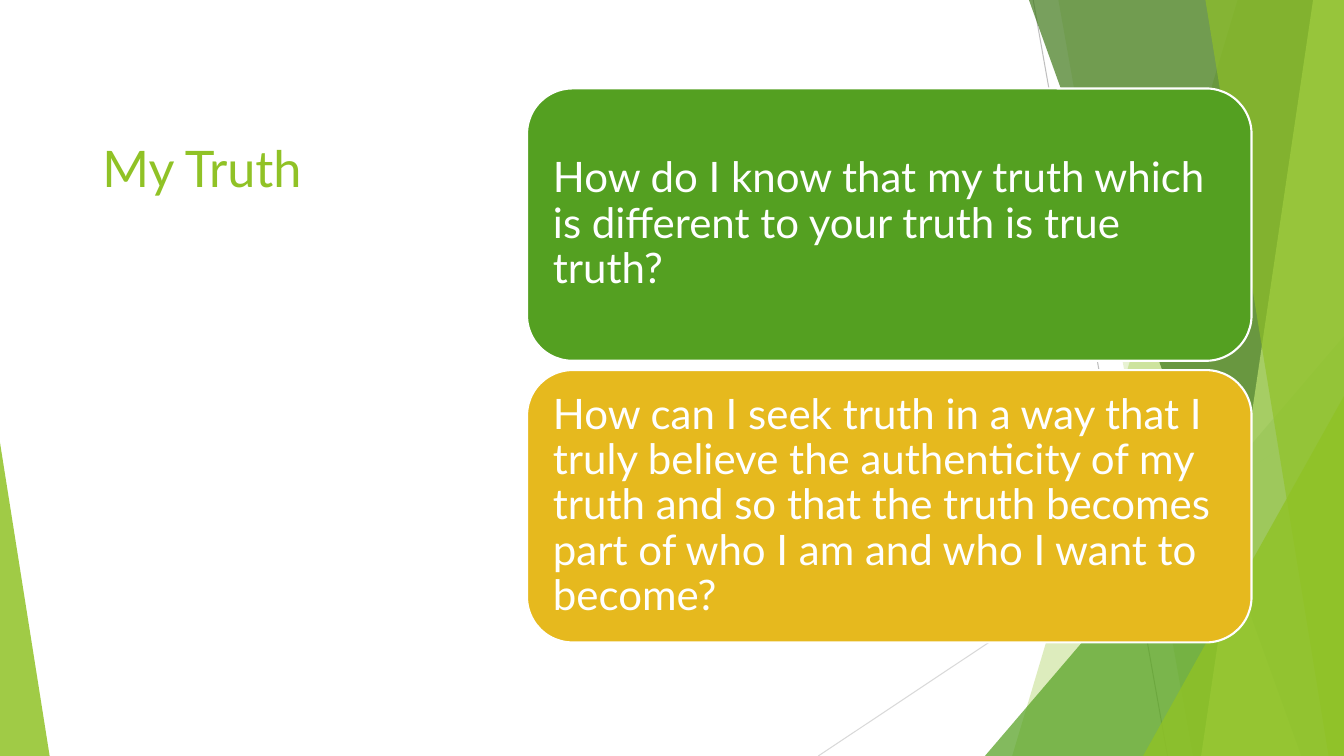
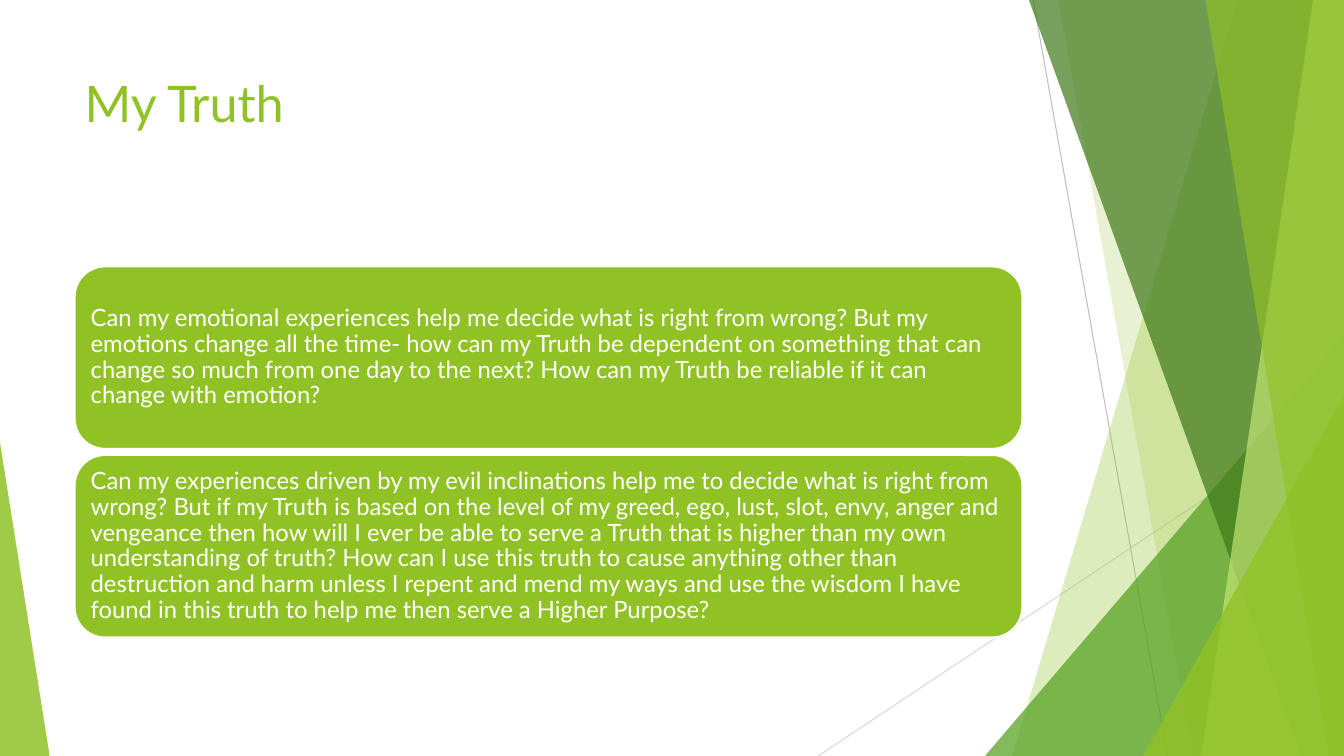
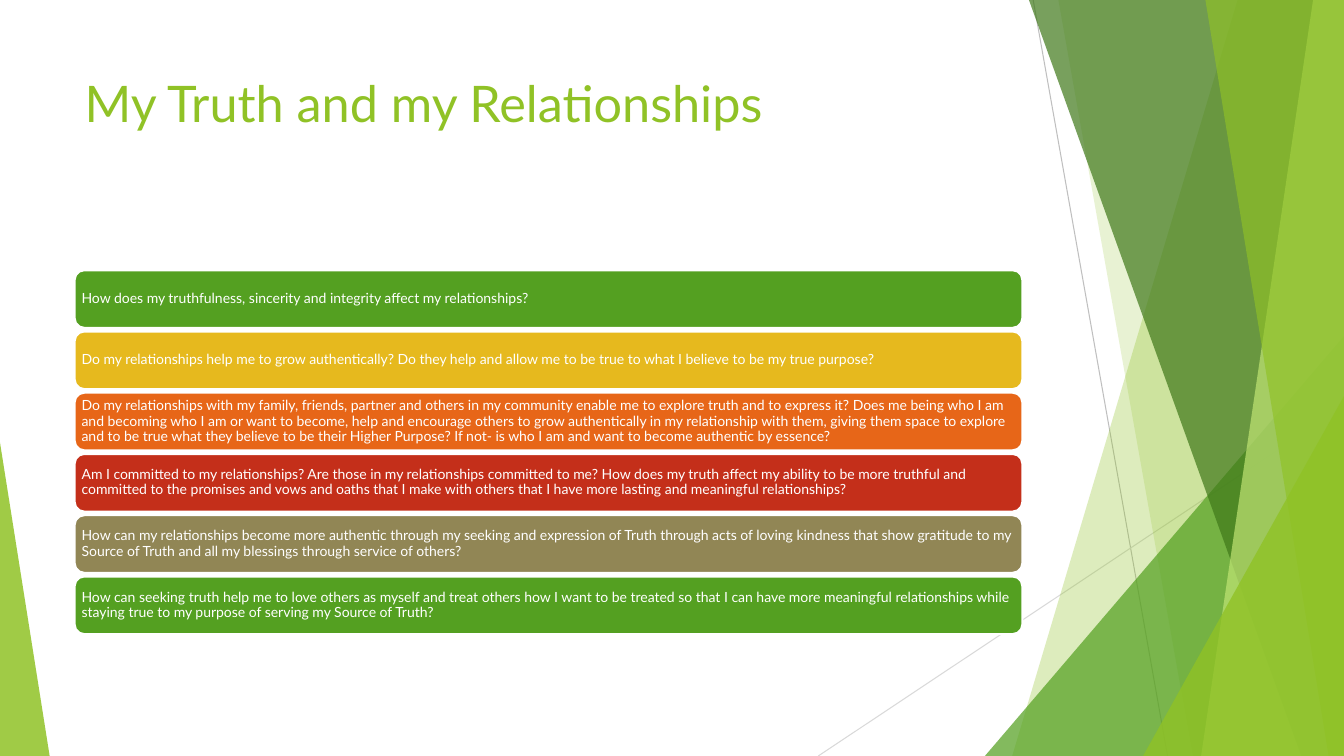
from lxml.etree import SubElement
from pptx import Presentation
from pptx.dml.color import RGBColor
from pptx.enum.shapes import MSO_CONNECTOR, MSO_SHAPE
from pptx.enum.text import MSO_ANCHOR, MSO_AUTO_SIZE, PP_ALIGN
from pptx.oxml.ns import qn
from pptx.util import Pt

WIDTH, HEIGHT = 960, 540
FONT = "Lato"
LIME, GREEN, DARK_GREEN, PALE_LIME = "90C226", "54A021", "3F7819", "C0E474"
GOLD, ORANGE, RED, OLIVE, WHITE = "E6B91E", "E76618", "C42F1A", "918655", "FFFFFF"


def paint(fill, color, opacity=100):
    """Make a shape, line or font fill solid, with opacity in percent."""
    fill.solid()
    fill.fore_color.rgb = RGBColor.from_string(color)
    if opacity < 100:
        color_element = fill._xPr.find(qn("a:solidFill"))[0]
        SubElement(color_element, qn("a:alpha"), val=str(opacity * 1000))


def write_text(shape, text, size, color=WHITE, anchor=MSO_ANCHOR.MIDDLE,
               line_spacing=0.9, inset=None):
    frame = shape.text_frame
    frame.text = text
    frame.word_wrap = True
    frame.auto_size = MSO_AUTO_SIZE.NONE
    frame.vertical_anchor = anchor
    if inset is not None:
        frame.margin_left = frame.margin_right = Pt(inset)
        frame.margin_top = frame.margin_bottom = Pt(inset)
    para = frame.paragraphs[0]
    para.alignment = PP_ALIGN.LEFT
    para.line_spacing = line_spacing
    para.font.name = FONT
    para.font.size = Pt(size)
    paint(para.font.fill, color)


# Content: title box, card column (left, top, width, height, pitch), cards
TITLE_BOX = (53.3, 48, 677, 104)
slides = [
    {
        "title": "My Truth", "title_box": (66, 94.5, 252, 333), "size": 30,
        "column": (376.5, 63.2, 517.5, 194.5, 201.2),
        "cards": [
            (GREEN, "How do I know that my truth which is different to your truth is true truth?"),
            (GOLD, "How can I seek truth in a way that I truly believe the authenticity of my "
                   "truth and so that the truth becomes part of who I am and who I want to become?"),
        ],
    },
    {
        "title": "My Truth", "title_box": TITLE_BOX, "size": 17,
        "column": (53.3, 190.3, 677, 130.4, 134.7),
        "cards": [
            (LIME, "Can my emotional experiences help me decide what is right from wrong? But my "
                   "emotions change all the time- how can my Truth be dependent on something that "
                   "can change so much from one day to the next? How can my Truth be reliable if "
                   "it can change with emotion?"),
            (LIME, "Can my experiences driven by my evil inclinations help me to decide what is "
                   "right from wrong? But if my Truth is based on the level of my greed, ego, "
                   "lust, slot, envy, anger and vengeance then how will I ever be able to serve a "
                   "Truth that is higher than my own understanding of truth? How can I use this "
                   "truth to cause anything other than destruction and harm unless I repent and "
                   "mend my ways and use the wisdom I have found in this truth to help me then "
                   "serve a Higher Purpose?"),
        ],
    },
    {
        "title": "My Truth and my Relationships", "title_box": TITLE_BOX, "size": 10,
        "column": (53.3, 193, 677, 41.2, 43.75),
        "cards": [
            (GREEN, "How does my truthfulness, sincerity and integrity affect my relationships?"),
            (GOLD, "Do my relationships help me to grow authentically? Do they help and allow me "
                   "to be true to what I believe to be my true purpose?"),
            (ORANGE, "Do my relationships with my family, friends, partner and others in my "
                     "community enable me to explore truth and to express it? Does me being who I "
                     "am and becoming who I am or want to become, help and encourage others to "
                     "grow authentically in my relationship with them, giving them space to "
                     "explore and to be true what they believe to be their Higher Purpose? If "
                     "not- is who I am and want to become authentic by essence?"),
            (RED, "Am I committed to my relationships? Are those in my relationships committed to "
                  "me? How does my truth affect my ability to be more truthful and committed to "
                  "the promises and vows and oaths that I make with others that I have more "
                  "lasting and meaningful relationships?"),
            (OLIVE, "How can my relationships become more authentic through my seeking and "
                    "expression of Truth through acts of loving kindness that show gratitude to "
                    "my Source of Truth and all my blessings through service of others?"),
            (GREEN, "How can seeking truth help me to love others as myself and treat others how "
                    "I want to be treated so that I can have more meaningful relationships while "
                    "staying true to my purpose of serving my Source of Truth?"),
        ],
    },
]

deck = Presentation()
deck.slide_width, deck.slide_height = Pt(WIDTH), Pt(HEIGHT)
layout = deck.slide_layouts.get_by_name("Title Only")
pages = [deck.slides.add_slide(layout) for _ in slides]

# Shared backdrop: drawn on the first page, then moved to the layout
canvas = pages[0].shapes
backdrop = []
for ends, color in [((738, 0, 834, HEIGHT), "BFBFBF"), ((WIDTH, 290, 584.5, HEIGHT), "D9D9D9")]:
    line = canvas.add_connector(MSO_CONNECTOR.STRAIGHT, *map(Pt, ends))
    line.line.width = Pt(0.75)
    paint(line.line.fill, color)
    SubElement(line._element.spPr, qn("a:effectLst"))
    backdrop.append(line)

# A band runs from (top x, bottom x) to the right edge;
# a triangle has (left, top, width, apex) and stands on the bottom edge.
facets = [
    ((884, 723), LIME, 30),
    ((756, 852), LIME, 20),
    ((703.5, 240, 256.5, 1), GREEN, 72),
    ((735, 929.5), DARK_GREEN, 70),
    ((938, 858), PALE_LIME, 70),
    ((861, 949), LIME, 65),
    ((816.5, 283, 143.5, 1), LIME, 80),
    ((0, 316, 35.5, 0), LIME, 85),
]
for outline, color, opacity in facets:
    if len(outline) == 2:
        top_x, bottom_x = outline
        builder = canvas.build_freeform(Pt(top_x), 0)
        corners = [(WIDTH, 0), (WIDTH, HEIGHT), (bottom_x, HEIGHT)]
        builder.add_line_segments([(Pt(x), Pt(y)) for x, y in corners])
        facet = builder.convert_to_shape()
    else:
        left, top, width, apex = outline
        facet = canvas.add_shape(MSO_SHAPE.ISOSCELES_TRIANGLE,
                                 Pt(left), Pt(top), Pt(width), Pt(HEIGHT - top))
        facet.adjustments[0] = apex
    facet.shadow.inherit = False
    facet.line.fill.background()
    paint(facet.fill, color, opacity)
    backdrop.append(facet)

for index, shape in enumerate(backdrop):
    shape._element._nvXxPr.cNvPr.id = 100 + index
    layout.shapes._spTree.insert(2 + index, shape._element)

# Titles and cards
for page, content in zip(pages, slides):
    title = page.shapes.title
    title.left, title.top, title.width, title.height = map(Pt, content["title_box"])
    write_text(title, content["title"], 36, color=LIME, anchor=MSO_ANCHOR.TOP, line_spacing=1.0)

    left, top, width, height, pitch = content["column"]
    size = content["size"]
    for row, (color, text) in enumerate(content["cards"]):
        card = page.shapes.add_shape(MSO_SHAPE.ROUNDED_RECTANGLE, Pt(left),
                                     Pt(top + row * pitch), Pt(width), Pt(height))
        card.shadow.inherit = False
        paint(card.fill, color)
        paint(card.line.fill, WHITE)
        card.line.width = Pt(1.5)
        write_text(card, text, size, inset=0.3 * size)

deck.save("out.pptx")
